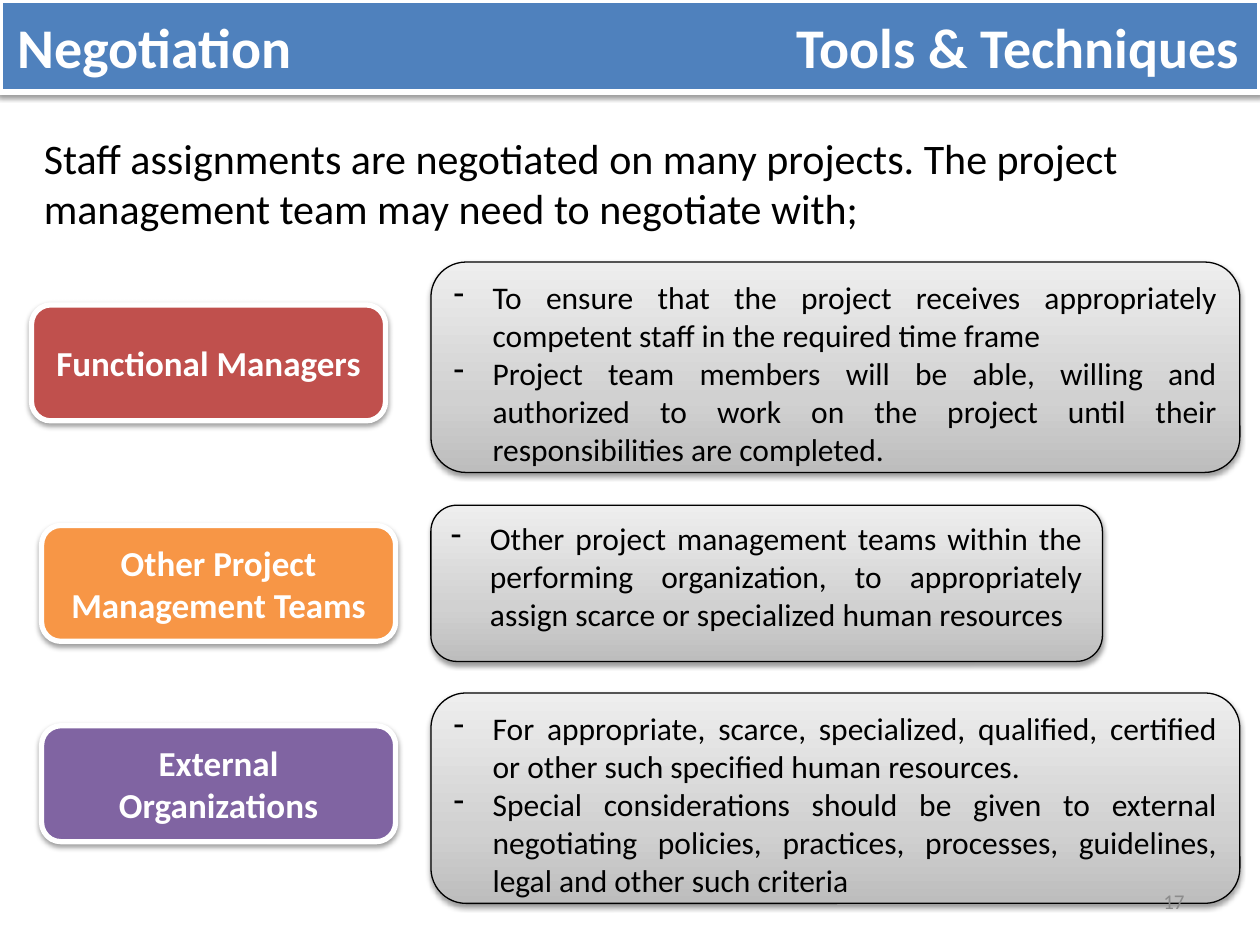
from copy import deepcopy
from dataclasses import dataclass

from lxml import etree
from pptx import Presentation
from pptx import util as u
from pptx.dml.color import RGBColor
from pptx.enum import shapes, text
from pptx.oxml import ns

WHITE = RGBColor(0xFF, 0xFF, 0xFF)
BLACK = RGBColor(0x00, 0x00, 0x00)
BLUE = RGBColor(0x4F, 0x81, 0xBD)
RED = RGBColor(0xC0, 0x50, 0x4D)
ORANGE = RGBColor(0xF7, 0x96, 0x46)
PURPLE = RGBColor(0x80, 0x64, 0xA2)
GRAY = RGBColor(0x8C, 0x8C, 0x8C)
PANEL_STOPS = (
    (0, RGBColor(0xBD, 0xBD, 0xBD)),
    (0.35, RGBColor(0xD1, 0xD1, 0xD1)),
    (1, RGBColor(0xEE, 0xEE, 0xEE)),
)
FONT = "Calibri"
LABEL_SIZE = (2.81, 0.92)
PANEL_LEFT = 3.42
INDENT = u.Inches(0.31)
ALIGN = text.PP_ALIGN
ANCHOR = text.MSO_ANCHOR
SHAPE = shapes.MSO_SHAPE

Box = tuple[float, float, float, float]


@dataclass
class Party:
    label: str
    color: RGBColor
    label_at: tuple[float, float]
    panel_top: float
    panel_size: tuple[float, float]
    reasons: list[str]


PARTIES = [
    Party("Functional Managers", RED, (0.25, 2.42), 2.08, (6.42, 1.67), [
        "To ensure that the project receives appropriately competent staff "
        "in the required time frame",
        "Project team members will be able, willing and authorized to work "
        "on the project until their responsibilities are completed.",
    ]),
    Party("Other Project Management Teams", ORANGE, (0.33, 4.17), 4.01, (5.33, 1.24), [
        "Other project management teams within the performing organization, "
        "to appropriately assign scarce or specialized human resources",
    ]),
    Party("External Organizations", PURPLE, (0.33, 5.76), 5.5, (6.42, 1.67), [
        "For appropriate, scarce, specialized, qualified, certified or other "
        "such specified human resources.",
        "Special considerations should be given to external negotiating "
        "policies, practices, processes, guidelines, legal and other such criteria",
    ]),
]


def add_element(parent, tag: str, **attributes: str):
    return etree.SubElement(parent, ns.qn(tag), attributes)


def add_shadow(shape) -> None:
    shape.shadow.inherit = False
    effects = shape._element.spPr.find(ns.qn("a:effectLst"))
    shadow = add_element(
        effects, "a:outerShdw", blurRad=str(u.Pt(3.1)), dist=str(u.Pt(1.6)),
        dir="5400000", rotWithShape="0",
    )
    color = add_element(shadow, "a:srgbClr", val=str(BLACK))
    add_element(color, "a:alpha", val="38000")


def add_block(slide, kind, box: Box, line_color: RGBColor, line_width: float):
    shape = slide.shapes.add_shape(kind, *map(u.Inches, box))
    shape.line.color.rgb = line_color
    shape.line.width = u.Pt(line_width)
    add_shadow(shape)
    return shape


def fill_solid(shape, color: RGBColor) -> None:
    shape.fill.solid()
    shape.fill.fore_color.rgb = color


def fill_panel(shape) -> None:
    """Apply the three-stop gray gradient, darkest at the bottom."""
    shape.fill.gradient()
    shape.fill.gradient_angle = 90
    stop_list = shape._element.spPr.find(".//" + ns.qn("a:gsLst"))
    stop_list.append(deepcopy(stop_list[-1]))
    for stop, (position, color) in zip(shape.fill.gradient_stops, PANEL_STOPS):
        stop.position = position
        stop.color.rgb = color


def write(shape, lines: list[str], size: float, color: RGBColor, align,
          anchor=ANCHOR.TOP, bold: bool = False) -> None:
    frame = shape.text_frame
    frame.word_wrap = True
    frame.vertical_anchor = anchor
    font_format = {"name": FONT, "size": u.Pt(size), "bold": bold}
    for index, line in enumerate(lines):
        paragraph = frame.add_paragraph() if index else frame.paragraphs[0]
        paragraph.alignment = align
        run = paragraph.add_run()
        run.text = line
        run.font.color.rgb = color
        for name, value in font_format.items():
            setattr(run.font, name, value)


def add_dashes(shape) -> None:
    for paragraph in shape.text_frame.paragraphs:
        properties = paragraph._p.get_or_add_pPr()
        properties.set("marL", str(INDENT))
        properties.set("indent", str(-INDENT))
        add_element(properties, "a:buFontTx")
        add_element(properties, "a:buChar", char="-")


def add_title(slide, left_text: str, right_text: str) -> None:
    """Draw the banner with one text at each end, split by a right tab stop."""
    banner = add_block(slide, SHAPE.RECTANGLE, (0, 0, 10, 0.73), WHITE, 3)
    fill_solid(banner, BLUE)
    write(banner, [f"{left_text}\t{right_text}"], 32, WHITE, ALIGN.LEFT, ANCHOR.MIDDLE, True)
    banner.text_frame.margin_left = banner.text_frame.margin_right = u.Inches(0.14)
    properties = banner.text_frame.paragraphs[0]._p.get_or_add_pPr()
    tabs = add_element(properties, "a:tabLst")
    add_element(tabs, "a:tab", pos=str(u.Inches(9.7)), algn="r")


def add_text(slide, box: Box, line: str, size: float, color: RGBColor, align,
             anchor=ANCHOR.TOP) -> None:
    write(slide.shapes.add_textbox(*map(u.Inches, box)), [line], size, color, align, anchor)


def add_party(slide, party: Party) -> None:
    label = add_block(slide, SHAPE.ROUNDED_RECTANGLE, (*party.label_at, *LABEL_SIZE), WHITE, 3)
    fill_solid(label, party.color)
    write(label, [party.label], 20, WHITE, ALIGN.CENTER, ANCHOR.MIDDLE, True)

    panel_box = (PANEL_LEFT, party.panel_top, *party.panel_size)
    panel = add_block(slide, SHAPE.ROUNDED_RECTANGLE, panel_box, BLACK, 0.75)
    fill_panel(panel)
    write(panel, party.reasons, 18, BLACK, ALIGN.JUSTIFY)
    add_dashes(panel)


def main() -> None:
    presentation = Presentation()
    presentation.slide_width = u.Inches(10)
    presentation.slide_height = u.Inches(7.5)
    slide = presentation.slides.add_slide(presentation.slide_layouts[6])

    add_title(slide, "Negotiation", "Tools & Techniques")
    add_text(
        slide, (0.25, 1, 9.5, 6.33),
        "Staff assignments are negotiated on many projects. The project "
        "management team may need to negotiate with;",
        24, BLACK, ALIGN.LEFT,
    )
    for party in PARTIES:
        add_party(slide, party)
    add_text(slide, (7.17, 6.95, 2.33, 0.4), "17", 12, GRAY, ALIGN.RIGHT, ANCHOR.MIDDLE)

    presentation.save("out.pptx")


if __name__ == "__main__":
    main()
